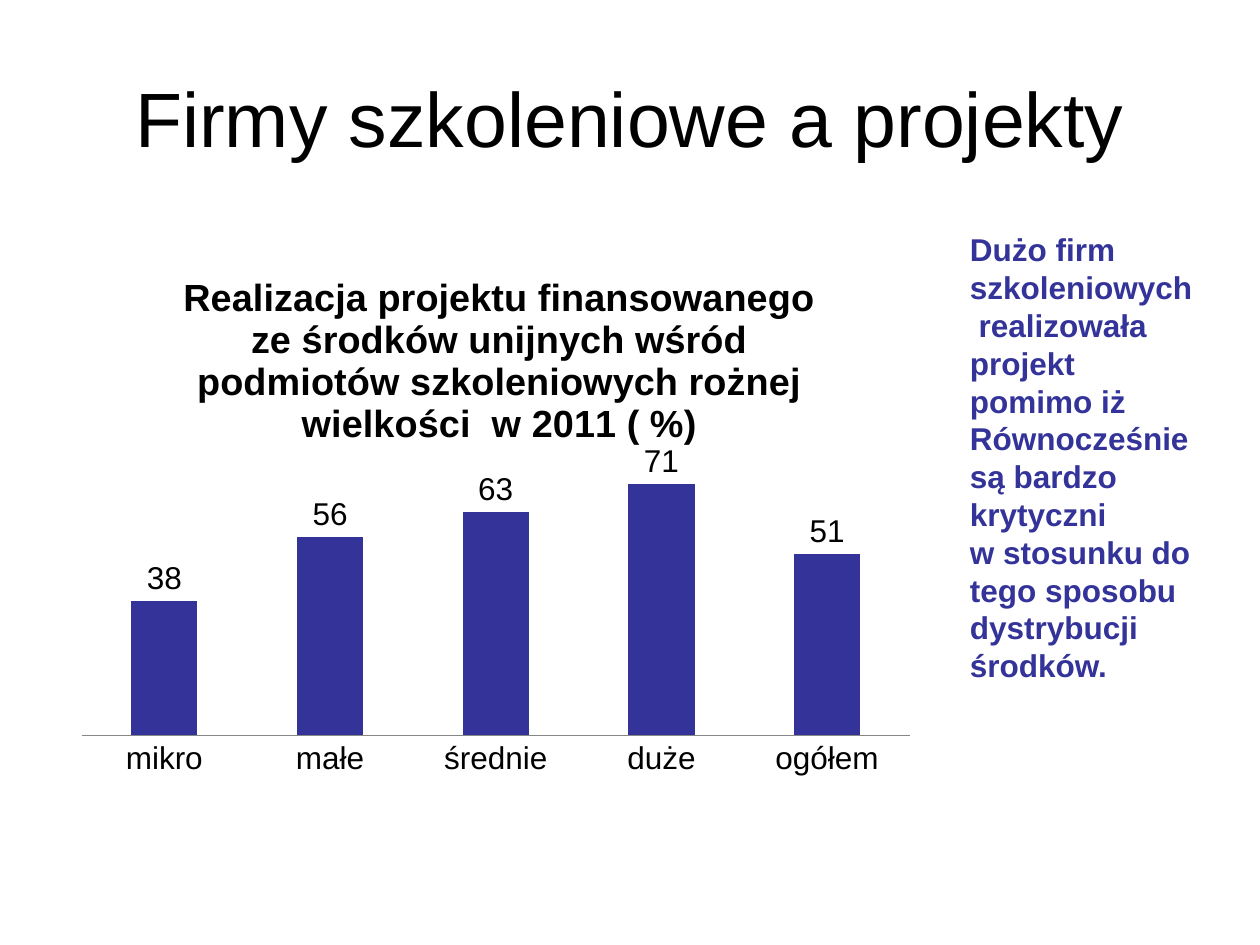
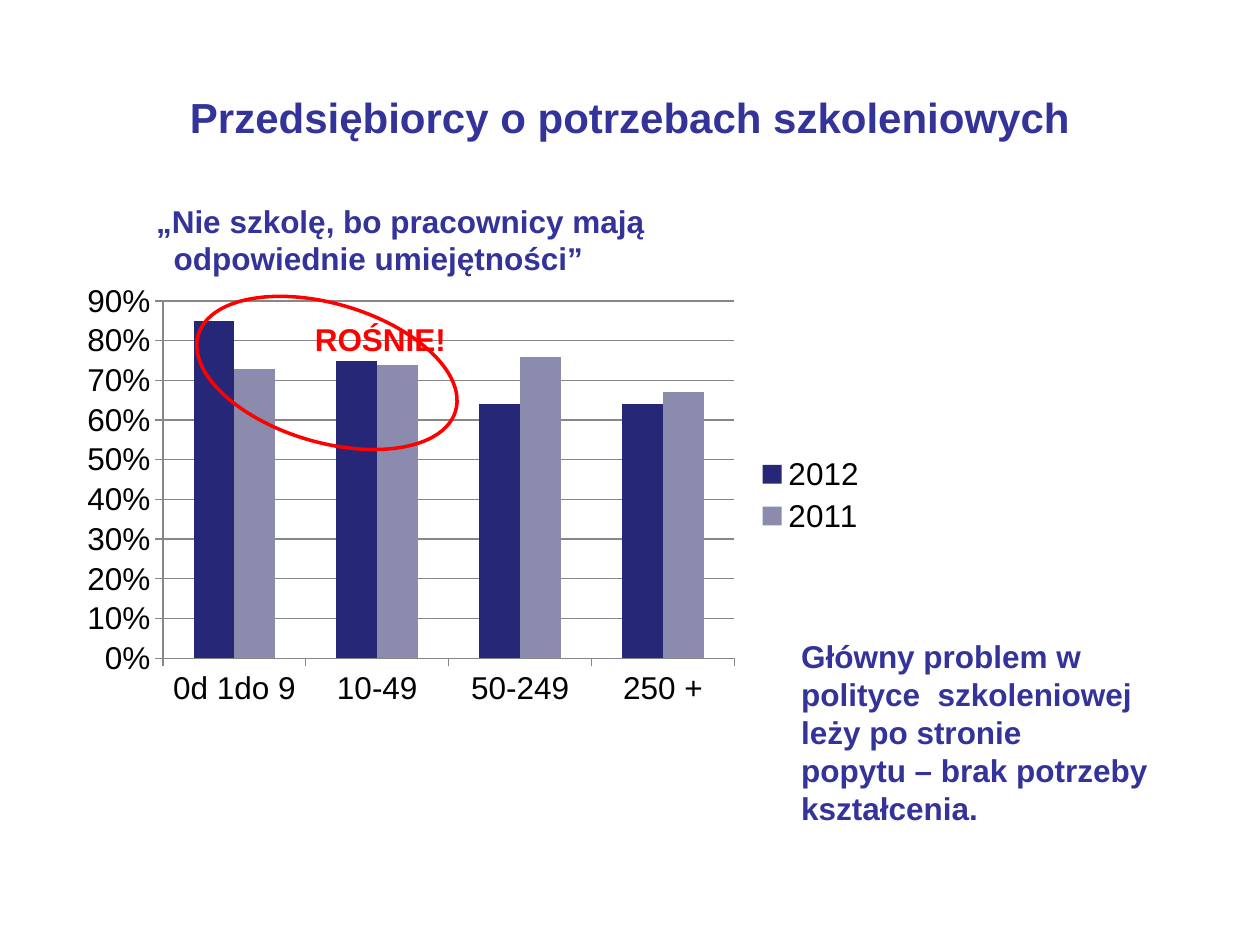
from lxml import etree
from pptx import Presentation
from pptx.chart.data import CategoryChartData
from pptx.dml.color import RGBColor
from pptx.enum.chart import XL_CHART_TYPE, XL_LABEL_POSITION, XL_LEGEND_POSITION, XL_TICK_LABEL_POSITION, XL_TICK_MARK
from pptx.enum.shapes import MSO_SHAPE
from pptx.enum.text import MSO_ANCHOR, PP_ALIGN
from pptx.oxml import parse_xml
from pptx.oxml.ns import nsdecls
from pptx.util import Inches, Pt

BLACK = RGBColor(0x00, 0x00, 0x00)
BLUE = RGBColor(0x33, 0x33, 0x99)
NAVY = RGBColor(0x27, 0x27, 0x78)
LILAC = RGBColor(0x8B, 0x8B, 0xAE)
RED = RGBColor(0xFF, 0x00, 0x00)
GREY = RGBColor(0x87, 0x87, 0x87)
FONT = "Arial"

FIRMS = {
    "title": ("Firmy szkoleniowe a projekty", 44, BLACK, False),
    "chart": {
        "box": (0.51, 1.94, 6.85, 4.33),
        "plot": (0.02, 0.38, 0.96, 0.52),
        "head": "Realizacja projektu finansowanego ze środków unijnych wśród "
                "podmiotów szkoleniowych rożnej wielkości  w 2011 ( %)",
        "cats": ["mikro", "małe", "średnie", "duże", "ogółem"],
        "rows": [("Series 1", [38, 56, 63, 71, 51], BLUE)],
        "top": 80, "step": 20, "format": "0",
    },
    "notes": [
        ((7.6, 1.78, 1.97, 4.04), BLUE, True, [
            "Dużo firm szkoleniowych  realizowała projekt pomimo iż",
            "Równocześnie są bardzo krytyczni",
            "w stosunku do tego sposobu dystrybucji środków."]),
    ],
}
NEEDS = {
    "title": ("Przedsiębiorcy o potrzebach szkoleniowych", 24, BLUE, True),
    "chart": {
        "box": (0.59, 2.18, 6.39, 3.5),
        "plot": (0.11, 0.06, 0.71, 0.81),
        "head": None,
        "cats": ["0d 1do 9", "10-49", "50-249", "250 +"],
        "rows": [("2012", [0.85, 0.75, 0.64, 0.64], NAVY),
                 ("2011", [0.73, 0.74, 0.76, 0.67], LILAC)],
        "top": 0.9, "step": 0.1, "format": "0%",
    },
    "notes": [
        ((1.14, 1.55, 4.11, 0.71), BLUE, False, [
            "„Nie szkolę, bo pracownicy mają", "odpowiednie umiejętności”"]),
        ((6.26, 5.01, 3.31, 1.62), BLUE, True, [
            "Główny problem w polityce  szkoleniowej",
            "leży po stronie",
            "popytu – brak potrzeby kształcenia."]),
        ((2.4, 2.49, 1.25, 0.4), RED, False, ["ROŚNIE!"]),
    ],
}
RING = (1.53, 2.41, 2.13, 1.1)


def place(box):
    return [Inches(n) for n in box]


def style(font, size, color, bold=False):
    font.name, font.size, font.bold = FONT, Pt(size), bold
    font.color.rgb = color


def write(slide, box, lines, size, color, bold=True, wrap=True):
    shape = slide.shapes.add_textbox(*place(box))
    frame = shape.text_frame
    frame.word_wrap = wrap
    frame.text = "\n".join(lines)
    for para in frame.paragraphs:
        style(para.font, size, color, bold)
    return frame


def add_title(slide, text, size, color, bold):
    frame = write(slide, (0.5, 0.3, 9, 1.25), [text], size, color, bold)
    frame.vertical_anchor = MSO_ANCHOR.MIDDLE
    frame.paragraphs[0].alignment = PP_ALIGN.CENTER


def set_layout(parent, index, inner, **spots):
    for old in parent.findall("{*}layout"):
        parent.remove(old)
    layout = parse_xml(f"<c:layout {nsdecls('c')}><c:manualLayout/></c:layout>")
    space = layout.tag.split("}")[0] + "}"
    pairs = [("layoutTarget", "inner")] if inner else []
    pairs += [("xMode", "edge"), ("yMode", "edge"), *spots.items()]
    for name, value in pairs:
        etree.SubElement(layout[0], space + name).set("val", str(value))
    parent.insert(index, layout)


def add_chart(slide, item):
    data = CategoryChartData(number_format=item["format"])
    data.categories = item["cats"]
    for name, values, _ in item["rows"]:
        data.add_series(name, values)
    chart = slide.shapes.add_chart(
        XL_CHART_TYPE.COLUMN_CLUSTERED, *place(item["box"]), data).chart
    style(chart.font, 18, BLACK)
    plot = chart.plots[0]
    plot.gap_width, plot.overlap, plot.vary_by_categories = 150, 0, False
    for series, (_, _, color) in zip(plot.series, item["rows"]):
        series.format.fill.solid()
        series.format.fill.fore_color.rgb = color
    cats, vals = chart.category_axis, chart.value_axis
    vals.minimum_scale, vals.maximum_scale = 0, item["top"]
    vals.major_unit = item["step"]
    cats.format.line.color.rgb = GREY
    x, y, w, h = item["plot"]
    set_layout(chart.plots[0]._element.getparent(), 0, True, x=x, y=y, w=w, h=h)
    if item["head"]:
        chart.has_legend = False
        frame = chart.chart_title.text_frame
        frame.text = item["head"]
        style(frame.paragraphs[0].font, 21.6, BLACK, True)
        set_layout(chart.chart_title._element, 1, False, x=0.13, y=0.04)
        cats.major_tick_mark = XL_TICK_MARK.NONE
        vals.visible = vals.has_major_gridlines = False
        plot.has_data_labels = True
        labels = plot.data_labels
        labels.show_value = True
        labels.position = XL_LABEL_POSITION.OUTSIDE_END
        style(labels.font, 18, BLACK)
    else:
        chart.has_title = False
        chart.has_legend = True
        chart.legend.position = XL_LEGEND_POSITION.RIGHT
        chart.legend.include_in_layout = False
        vals.has_major_gridlines = True
        vals.major_gridlines.format.line.color.rgb = GREY
        vals.format.line.color.rgb = GREY
        vals.tick_label_position = XL_TICK_LABEL_POSITION.NEXT_TO_AXIS
        vals.tick_labels.number_format = item["format"]
        vals.tick_labels.number_format_is_linked = False
        cats.major_tick_mark = vals.major_tick_mark = XL_TICK_MARK.OUTSIDE


def add_ring(slide):
    ring = slide.shapes.add_shape(MSO_SHAPE.OVAL, *place(RING))
    ring.rotation = 16.5
    ring.shadow.inherit = False
    ring.fill.background()
    ring.line.color.rgb = RED
    ring.line.width = Pt(2)


def build(deck, page):
    slide = deck.slides.add_slide(deck.slide_layouts[6])
    add_title(slide, *page["title"])
    add_chart(slide, page["chart"])
    frames = [write(slide, box, lines, 18, color, wrap=wrap)
              for box, color, wrap, lines in page["notes"]]
    return slide, frames


def main():
    deck = Presentation()
    deck.slide_width, deck.slide_height = Inches(10), Inches(7.5)
    build(deck, FIRMS)
    slide, frames = build(deck, NEEDS)
    quote = frames[0].paragraphs[1]
    quote._p.get_or_add_pPr().set("marL", str(Inches(0.14)))
    add_ring(slide)
    deck.save("out.pptx")


if __name__ == "__main__":
    main()
